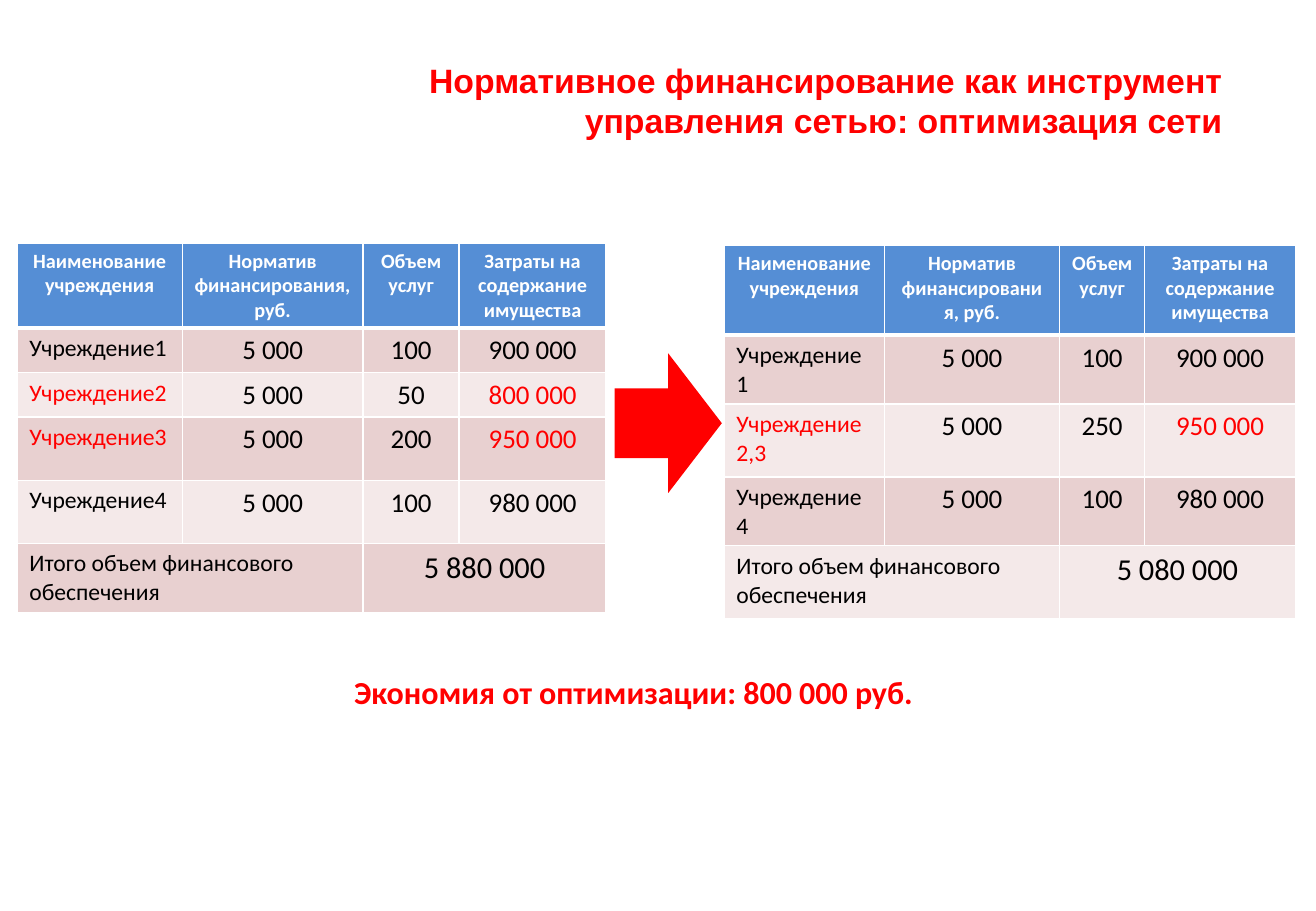
import lxml.etree
import pptx
import pptx.dml.color
import pptx.enum.shapes
import pptx.enum.text
import pptx.oxml.ns
import pptx.util

Cm = pptx.util.Cm
Pt = pptx.util.Pt
RGBColor = pptx.dml.color.RGBColor
Align = pptx.enum.text.PP_ALIGN
Anchor = pptx.enum.text.MSO_ANCHOR
qn = pptx.oxml.ns.qn

RED = RGBColor(0xFF, 0x00, 0x00)
BLACK = RGBColor(0x00, 0x00, 0x00)
WHITE = RGBColor(0xFF, 0xFF, 0xFF)
BLUE = RGBColor(0x55, 0x8E, 0xD5)
ROSE = RGBColor(0xE8, 0xD0, 0xD0)
PALE_ROSE = RGBColor(0xF4, 0xE9, 0xE9)

HEADINGS = [
    "Наименование учреждения",
    "Норматив финансирования, руб.",
    "Объем услуг",
    "Затраты на содержание имущества",
]
TOTAL_LABEL = "Итого объем финансового обеспечения"

BEFORE = {
    "place": (0.36, 5.08),
    "widths": [3.45, 3.78, 2.01, 3.07],
    "heights": [1.55, 0.91, 0.91, 1.32, 1.32, 1.32],
    "rows": [
        ["Учреждение1", "5 000", "100", "900 000"],
        ["Учреждение2", "5 000", "50", "800 000"],
        ["Учреждение3", "5 000", "200", "950 000"],
        ["Учреждение4", "5 000", "100", "980 000"],
    ],
    "merging": ["Учреждение2", "Учреждение3"],
    "total": "5 880 000",
}
AFTER = {
    "place": (15.14, 5.13),
    "widths": [3.35, 3.66, 1.78, 3.15],
    "heights": [1.88, 1.4, 1.52, 1.4, 1.52],
    "rows": [
        ["Учреждение1", "5 000", "100", "900 000"],
        ["Учреждение2,3", "5 000", "250", "950 000"],
        ["Учреждение4", "5 000", "100", "980 000"],
    ],
    "merging": ["Учреждение2,3"],
    "total": "5 080 000",
}


def write(frame, text, align, color, **font_format):
    para = frame.paragraphs[0]
    para.alignment = align
    span = para.add_run()
    span.text = text
    span.font.color.rgb = color
    for name, value in font_format.items():
        setattr(span.font, name, value)


def add_text(page, left, top, width, height, text, align, **font_format):
    box = page.shapes.add_textbox(Cm(left), Cm(top), Cm(width), Cm(height))
    box.text_frame.word_wrap = True
    box.text_frame.vertical_anchor = Anchor.MIDDLE
    write(box.text_frame, text, align, RED, bold=True, **font_format)


def add_border(cell, side, points):
    line = lxml.etree.SubElement(cell._tc.get_or_add_tcPr(), qn("a:" + side))
    line.set("w", str(Pt(points)))
    fill = lxml.etree.SubElement(line, qn("a:solidFill"))
    lxml.etree.SubElement(fill, qn("a:srgbClr")).set("val", str(WHITE))


def paint_cell(cell, row):
    widths = {"lnL": 1, "lnR": 1, "lnT": 3 if row == 1 else 1, "lnB": 3 if row == 0 else 1}
    for side, points in widths.items():
        add_border(cell, side, points)
    cell.fill.solid()
    cell.fill.fore_color.rgb = BLUE if row == 0 else ROSE if row % 2 else PALE_ROSE


def fill_institution(table, row, values, merging):
    for column, value in enumerate(values):
        is_marked = values[0] in merging and column in (0, 3)
        write(
            table.cell(row, column).text_frame,
            value,
            Align.CENTER if column else Align.LEFT,
            RED if is_marked else BLACK,
            name="Calibri",
            size=Pt(16 if column else 14),
            bold=False,
        )


def fill_total(table, row, total):
    cells = [(0, TOTAL_LABEL, Align.LEFT, 14), (2, total, Align.CENTER, 18)]
    for column, text, align, size in cells:
        cell = table.cell(row, column)
        cell.merge(table.cell(row, column + 1))
        write(cell.text_frame, text, align, BLACK, name="Calibri", size=Pt(size), bold=False)


def add_funding_table(page, data):
    left, top = data["place"]
    widths, heights = data["widths"], data["heights"]
    table = page.shapes.add_table(
        len(heights), len(widths), Cm(left), Cm(top), Cm(sum(widths)), Cm(sum(heights))
    ).table
    for column, width in zip(table.columns, widths):
        column.width = Cm(width)
    for index, height in enumerate(heights):
        table.rows[index].height = Cm(height)
        for cell in table.rows[index].cells:
            paint_cell(cell, index)
    for column, heading in enumerate(HEADINGS):
        write(table.cell(0, column).text_frame, heading, Align.CENTER, WHITE,
              name="Calibri", size=Pt(12), bold=True)
    for row, values in enumerate(data["rows"], start=1):
        fill_institution(table, row, values, data["merging"])
    fill_total(table, len(heights) - 1, data["total"])


def add_arrow(page):
    arrow = page.shapes.add_shape(
        pptx.enum.shapes.MSO_SHAPE.RIGHT_ARROW, Cm(12.85), Cm(7.39), Cm(2.24), Cm(2.92)
    )
    arrow.shadow.inherit = False
    arrow.fill.solid()
    arrow.fill.fore_color.rgb = RED
    arrow.line.fill.background()


def main():
    deck = pptx.Presentation()
    deck.slide_width, deck.slide_height = Cm(27.51), Cm(19.05)
    page = deck.slides.add_slide(deck.slide_layouts[6])
    add_text(
        page, 5.64, 0.91, 20.17, 2.36,
        "Нормативное финансирование как инструмент управления сетью: оптимизация сети",
        Align.RIGHT, name="Arial", size=Pt(20),
    )
    add_funding_table(page, BEFORE)
    add_arrow(page)
    add_funding_table(page, AFTER)
    add_text(
        page, 2.31, 13.92, 21.87, 1.07,
        "Экономия от оптимизации: 800 000 руб.",
        Align.CENTER, name="Calibri", size=Pt(19),
    )
    deck.save("out.pptx")


if __name__ == "__main__":
    main()
